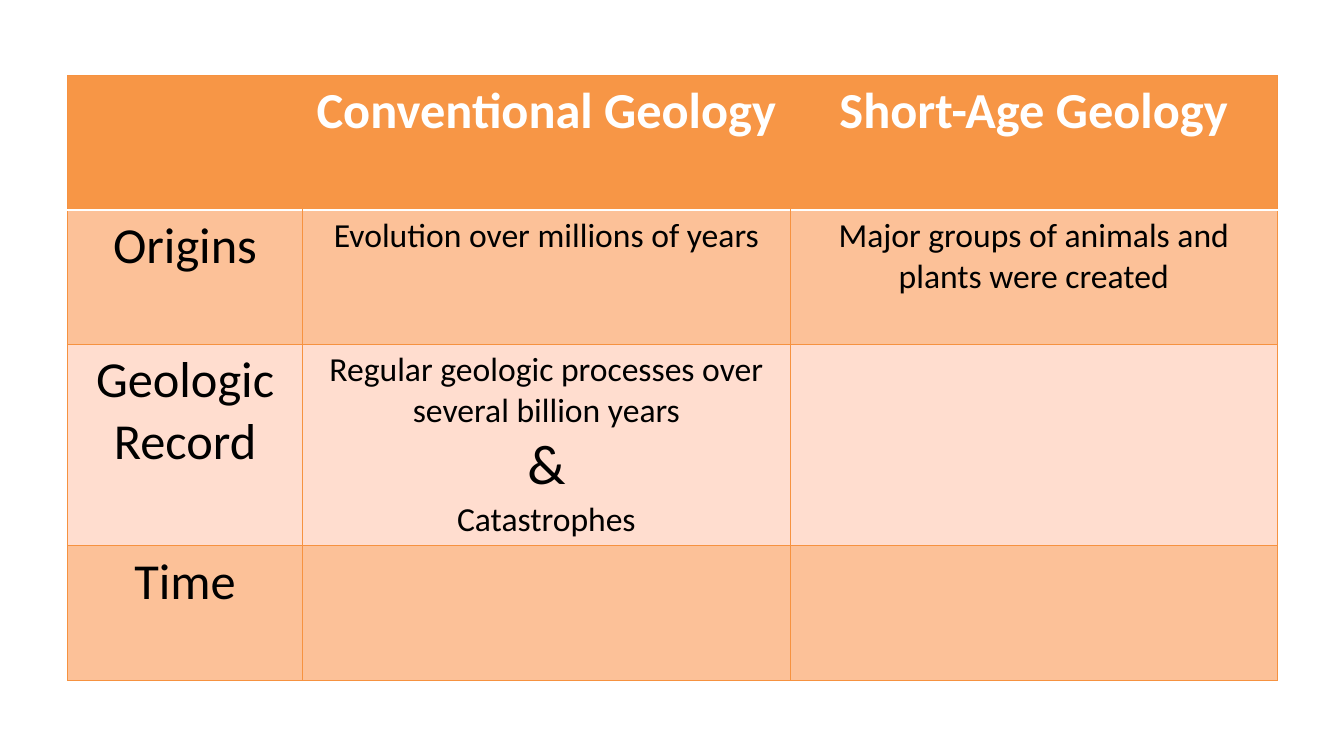
from lxml.etree import SubElement
from pptx import Presentation
from pptx.dml.color import RGBColor
from pptx.enum.text import PP_ALIGN
from pptx.oxml.ns import qn
from pptx.util import Inches, Pt

ORANGE = RGBColor(0xF7, 0x96, 0x46)
BAND = RGBColor(0xFC, 0xC1, 0x98)
PALE = RGBColor(0xFF, 0xDD, 0xCF)
GRID = RGBColor(0xF6, 0x92, 0x40)
WHITE = RGBColor(0xFF, 0xFF, 0xFF)
BLACK = RGBColor(0, 0, 0)

COLUMN_WIDTHS = [2.33, 4.83, 4.83]
ROW_HEIGHTS = [1.33, 1.33, 1.94, 1.33]
ROW_FILLS = [ORANGE, BAND, PALE, BAND]
COMPARISON = [
    [[], [("Conventional Geology", 36)], [("Short-Age Geology", 36)]],
    [
        [("Origins", 36)],
        [("Evolution over millions of years", 24)],
        [("Major groups of animals and plants were created", 24)],
    ],
    [
        [("Geologic", 36), ("Record", 36)],
        [
            ("Regular geologic processes over several billion years", 24),
            ("&", 40),
            ("Catastrophes", 24),
        ],
        [],
    ],
    [[("Time", 36)], [], []],
]


def add_border(cell, side, color, width):
    properties = cell._tc.get_or_add_tcPr()
    line = SubElement(properties, qn(f"a:ln{side}"), w=str(Pt(width)))
    if color is None:
        SubElement(line, qn("a:noFill"))
    else:
        fill = SubElement(line, qn("a:solidFill"))
        SubElement(fill, qn("a:srgbClr"), val=str(color))


def add_borders(cell, row, column):
    is_header = row == 0
    last_column = len(COLUMN_WIDTHS) - 1
    add_border(cell, "L", None if is_header and column > 0 else GRID, 0.75)
    add_border(cell, "R", None if is_header and column < last_column else GRID, 0.75)
    add_border(cell, "T", *((WHITE, 2) if row == 1 else (GRID, 0.75)))
    add_border(cell, "B", *((WHITE, 2) if is_header else (GRID, 0.75)))


def write_cell(cell, lines, is_header):
    frame = cell.text_frame
    for index, (text, size) in enumerate(lines):
        paragraph = frame.add_paragraph() if index else frame.paragraphs[0]
        paragraph.text = text
        paragraph.alignment = PP_ALIGN.CENTER
        font = paragraph.font
        font.name = "Calibri"
        font.size = Pt(size)
        font.bold = is_header
        font.color.rgb = WHITE if is_header else BLACK


def add_comparison(slide, left, top, width, height):
    table = slide.shapes.add_table(
        len(ROW_HEIGHTS), len(COLUMN_WIDTHS),
        Inches(left), Inches(top), Inches(width), Inches(height),
    ).table
    for column, column_width in zip(table.columns, COLUMN_WIDTHS):
        column.width = Inches(width * column_width / sum(COLUMN_WIDTHS))
    for row, row_height in zip(table.rows, ROW_HEIGHTS):
        row.height = Inches(height * row_height / sum(ROW_HEIGHTS))
    for row, entries in enumerate(COMPARISON):
        for column, lines in enumerate(entries):
            cell = table.cell(row, column)
            add_borders(cell, row, column)
            cell.fill.solid()
            cell.fill.fore_color.rgb = ROW_FILLS[row]
            write_cell(cell, lines, row == 0)


def main():
    deck = Presentation()
    deck.slide_width = Inches(13.33)
    deck.slide_height = Inches(7.5)
    slide = deck.slides.add_slide(deck.slide_layouts[6])
    add_comparison(slide, 0.67, 0.75, 12, 5.95)
    deck.save("out.pptx")


if __name__ == "__main__":
    main()
